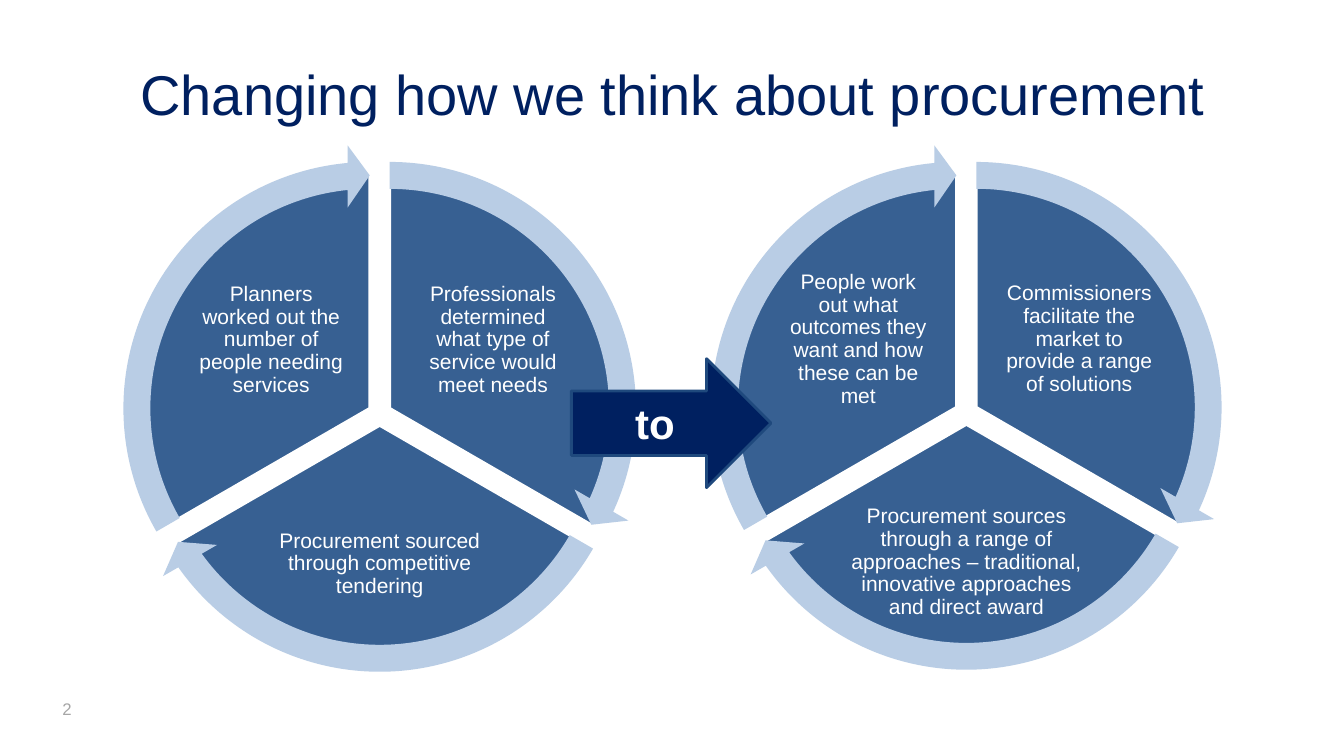
"""Builds the slide on changing how we think about procurement."""
from dataclasses import dataclass

from pptx import Presentation
from pptx.dml.color import RGBColor
from pptx.enum import shapes, text
from pptx.shapes.autoshape import Shape
from pptx.slide import Slide
from pptx.util import Cm, Pt

NAVY = RGBColor(0x00, 0x20, 0x60)
BLUE = RGBColor(0x37, 0x60, 0x92)
PALE = RGBColor(0xB9, 0xCD, 0xE5)
EDGE = RGBColor(0x1F, 0x49, 0x7D)
GREY = RGBColor(0xA6, 0xA6, 0xA6)
WHITE = RGBColor(0xFF, 0xFF, 0xFF)
ANGLE_UNIT = 0.6
HEAD_ANGLE = 3.28


@dataclass(frozen=True)
class Box:
    left: float
    top: float
    width: float
    height: float

    def lengths(self) -> tuple[Cm, Cm, Cm, Cm]:
        return Cm(self.left), Cm(self.top), Cm(self.width), Cm(self.height)


@dataclass(frozen=True)
class Sector:
    start: int
    dx: float
    dy: float
    label: Box


@dataclass(frozen=True)
class Wheel:
    left: float
    top: float
    size: float
    labels: tuple[str, str, str]


SECTORS = (
    Sector(270, 0.5, 0, Box(0.56, 0.23, 0.32, 0.25)),
    Sector(30, 0.25, 0.43, Box(0.25, 0.69, 0.5, 0.21)),
    Sector(150, 0, 0, Box(0.13, 0.23, 0.32, 0.25)),
)
WHEELS = (
    Wheel(3.4, 4.37, 11.84, (
        "Professionals determined what type of service would meet needs",
        "Procurement sourced through competitive tendering",
        "Planners worked out the number of people needing services",
    )),
    Wheel(18.21, 4.37, 11.79, (
        "Commissioners facilitate the market to provide a range of solutions",
        "Procurement sources through a range of approaches – traditional, "
        "innovative approaches and direct award",
        "People work out what outcomes they want and how these can be met",
    )),
)


def write(sp: Shape, words: str, size: float, color: RGBColor,
          align: text.PP_ALIGN = text.PP_ALIGN.CENTER, bold: bool = False,
          spacing: float = 1.0) -> None:
    tf = sp.text_frame
    tf.word_wrap = True
    tf.vertical_anchor = text.MSO_ANCHOR.MIDDLE
    p = tf.paragraphs[0]
    p.text = words
    p.alignment = align
    p.line_spacing = spacing
    p.font.name = "Arial"
    p.font.size = Pt(size)
    p.font.bold = bold
    p.font.color.rgb = color


def add_shape(s: Slide, kind: shapes.MSO_SHAPE, box: Box, fill: RGBColor,
              line: RGBColor | None = None,
              adjustments: tuple[float, ...] = ()) -> Shape:
    sp = s.shapes.add_shape(kind, *box.lengths())
    sp.shadow.inherit = False
    sp.fill.solid()
    sp.fill.fore_color.rgb = fill
    if line is None:
        sp.line.fill.background()
    else:
        sp.line.color.rgb = line
        sp.line.width = Pt(2)
    for i, value in enumerate(adjustments):
        sp.adjustments[i] = value
    return sp


def add_label(s: Slide, box: Box, words: str) -> None:
    sp = s.shapes.add_textbox(*box.lengths())
    tf = sp.text_frame
    tf.margin_left = tf.margin_right = tf.margin_top = tf.margin_bottom = 0
    write(sp, words, 15, WHITE, spacing=0.9)


def add_wheel(s: Slide, wheel: Wheel) -> None:
    d = wheel.size
    ring = 1.124 * d
    margin = (ring - d) / 2
    for sector, words in zip(SECTORS, wheel.labels):
        x, y = wheel.left + sector.dx, wheel.top + sector.dy
        start = sector.start * ANGLE_UNIT
        end = (sector.start + 120) % 360 * ANGLE_UNIT
        add_shape(s, shapes.MSO_SHAPE.PIE, Box(x, y, d, d), BLUE, WHITE,
                  (start, end))
        label = sector.label
        add_label(s, Box(x + label.left * d, y + label.top * d,
                         label.width * d, label.height * d), words)
    for sector in SECTORS:
        x, y = wheel.left + sector.dx, wheel.top + sector.dy
        start = sector.start * ANGLE_UNIT
        end = (sector.start + 120) % 360 * ANGLE_UNIT
        add_shape(s, shapes.MSO_SHAPE.CIRCULAR_ARROW,
                  Box(x - margin, y - margin, ring, ring), PALE,
                  adjustments=(0.051, HEAD_ANGLE, end - HEAD_ANGLE, start, 0.059))


def main() -> None:
    prs = Presentation()
    prs.slide_width, prs.slide_height = Cm(33.87), Cm(19.05)
    s = prs.slides.add_slide(prs.slide_layouts[6])
    number = s.shapes.add_textbox(*Box(1.32, 17.48, 5.56, 0.76).lengths())
    write(number, "2", 12, GREY, text.PP_ALIGN.LEFT)
    title = s.shapes.add_textbox(*Box(1.7, 0.76, 30.48, 3.18).lengths())
    write(title, "Changing how we think about procurement", 40, NAVY)
    for wheel in WHEELS:
        add_wheel(s, wheel)
    arrow = add_shape(s, shapes.MSO_SHAPE.RIGHT_ARROW,
                      Box(14.4, 9.04, 5.03, 3.25), NAVY, EDGE)
    write(arrow, "to", 30, WHITE, bold=True)
    prs.save("out.pptx")


if __name__ == "__main__":
    main()
